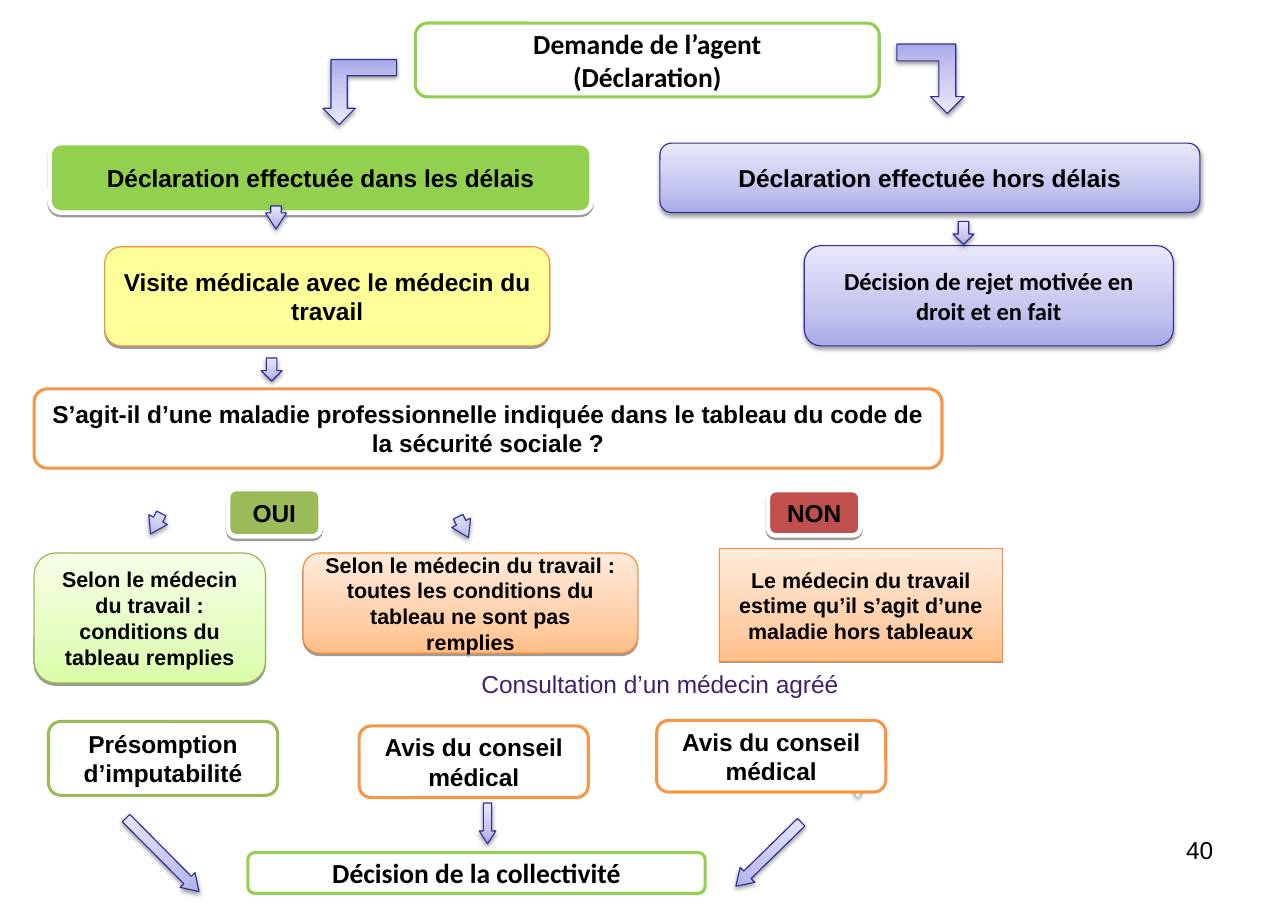
from copy import deepcopy
from dataclasses import dataclass

from lxml import etree
from pptx import Presentation
from pptx.dml.color import RGBColor
from pptx.enum.shapes import MSO_SHAPE
from pptx.enum.text import MSO_ANCHOR, PP_ALIGN
from pptx.oxml.ns import qn
from pptx.util import Inches, Pt

ROUNDED = MSO_SHAPE.ROUNDED_RECTANGLE
RECTANGLE = MSO_SHAPE.RECTANGLE
DOWN_ARROW = MSO_SHAPE.DOWN_ARROW
BENT_ARROW = MSO_SHAPE.BENT_UP_ARROW
CENTER, RIGHT = PP_ALIGN.CENTER, PP_ALIGN.RIGHT
TOP, MIDDLE = MSO_ANCHOR.TOP, MSO_ANCHOR.MIDDLE

COLORS = {
    "white": "FFFFFF", "black": "000000", "purple": "3F2270",
    "lime": "92D050", "green": "9BBB59", "dark_green": "94B64E",
    "red": "C0504D", "yellow": "FFFF99", "orange": "F79646",
    "dark_orange": "F68C36", "navy": "2F2F98", "pale": "F9F9F9",
    "lilac_0": "A9A9E9", "lilac_1": "C4C4EF", "lilac_2": "E8E8FA",
    "peach_0": "FFBE86", "peach_1": "FFD0AA", "peach_2": "FFEBDB",
    "mint_0": "DAFDA7", "mint_1": "E4FDC2", "mint_2": "F5FFE6",
}
GRADIENT_POSITIONS = (0, 0.35, 1)

# style: fill, line colour, line width, shadow blur (None = no shadow)
STYLES = {
    "lime_outline": ("white", "lime", 2, None),
    "green_outline": ("white", "green", 2, None),
    "orange_outline": ("white", "orange", 2, None),
    "lime_solid": ("lime", "white", 3, 0),
    "green_solid": ("green", "white", 3, 0),
    "red_solid": ("red", "white", 3, 0),
    "yellow": ("yellow", "dark_orange", 0.75, 0),
    "lilac": ("lilac", "navy", 0.75, 3.1),
    "peach": ("peach", "dark_orange", 0.75, 0),
    "mint": ("mint", "dark_green", 0.75, 0),
    "ghost": ("white", "pale", 0.75, 3.1),
    "plain": ("white", None, 0, None),
}


@dataclass
class Box:
    left: float
    top: float
    width: float
    height: float

    def inner(self, left, top, width, height):
        return Box(self.left + left, self.top + top, width, height)

    def lengths(self):
        return [Inches(v) for v in (self.left, self.top, self.width, self.height)]


def rgb(name):
    return RGBColor.from_string(COLORS[name])


def fill_gradient(shape, name):
    shape.fill.gradient()
    shape.fill.gradient_angle = 90
    stop_list = shape._element.spPr.find(qn("a:gradFill")).find(qn("a:gsLst"))
    stop_list.append(deepcopy(stop_list[-1]))
    for index, stop in enumerate(shape.fill.gradient_stops):
        stop.position = GRADIENT_POSITIONS[index]
        stop.color.rgb = rgb(f"{name}_{index}")


def add_shadow(shape, blur):
    effects = shape._element.spPr.find(qn("a:effectLst"))
    shadow = etree.SubElement(
        effects, qn("a:outerShdw"), blurRad=str(Pt(blur)), dist=str(Pt(1.6)),
        dir="5400000", rotWithShape="0")
    color = etree.SubElement(shadow, qn("a:srgbClr"), val=COLORS["black"])
    etree.SubElement(color, qn("a:alpha"), val="38000")


def add_styled(slide, kind, box, style):
    fill, line, line_width, blur = STYLES[style]
    shape = slide.shapes.add_shape(kind, *box.lengths())
    if f"{fill}_0" in COLORS:
        fill_gradient(shape, fill)
    else:
        shape.fill.solid()
        shape.fill.fore_color.rgb = rgb(fill)
    if line:
        shape.line.color.rgb = rgb(line)
        shape.line.width = Pt(line_width)
    else:
        shape.line.fill.background()
    shape.shadow.inherit = False
    if blur is not None:
        add_shadow(shape, blur)
    return shape


def write(shape, text, size=16, font="Arial", color="black", bold=True,
          align=CENTER, anchor=MIDDLE):
    frame = shape.text_frame
    frame.word_wrap = True
    frame.vertical_anchor = anchor
    frame.text = text
    for paragraph in frame.paragraphs:
        paragraph.alignment = align
        for run in paragraph.runs:
            values = {"size": Pt(size), "name": font, "bold": bold}
            for name, value in values.items():
                setattr(run.font, name, value)
            run.font.color.rgb = rgb(color)


def add_step(slide, box, style, text, kind=ROUNDED, **text_format):
    write(add_styled(slide, kind, box, style), text, **text_format)


def add_arrow(slide, box, rotation=0, head=0.776, style="lilac"):
    arrow = add_styled(slide, DOWN_ARROW, box, style)
    arrow.adjustments[1] = head
    arrow.rotation = rotation


def add_bent_arrow(slide, box, flipped):
    arrow = add_styled(slide, BENT_ARROW, box, "lilac")
    arrow.rotation = 180
    if flipped:
        arrow._element.spPr.find(qn("a:xfrm")).set("flipH", "1")


def build_request(slide, box):
    add_step(slide, box.inner(0.84, 0, 4.21, 0.67), "lime_outline",
             "Demande de l’agent\n(Déclaration)", size=18, font="Calibri")
    add_bent_arrow(slide, box.inner(0, 0.33, 0.67, 0.59), False)
    add_bent_arrow(slide, box.inner(5.21, 0.19, 0.61, 0.63), True)


def build_in_time(slide, box):
    add_step(slide, box.inner(0.14, 0, 4.92, 0.63), "lime_solid",
             "Déclaration effectuée dans les délais")
    add_step(slide, box.inner(0.64, 0.94, 4.04, 0.9), "yellow",
             "Visite médicale avec le médecin du travail")
    add_step(slide, box.inner(0, 2.23, box.width, 0.72), "orange_outline",
             "S’agit-il d’une maladie professionnelle indiquée dans le tableau "
             "du code de la sécurité sociale ?")
    add_arrow(slide, box.inner(2.1, 0.57, 0.19, 0.21))
    add_arrow(slide, box.inner(2.06, 1.95, 0.19, 0.21), head=0.5)


def build_late(slide, box):
    add_step(slide, box.inner(0, 0, box.width, 0.63), "lilac",
             "Déclaration effectuée hors délais")
    add_step(slide, box.inner(1.31, 0.93, 3.35, 0.91), "lilac",
             "Décision de rejet motivée en droit et en fait", font="Calibri")
    add_arrow(slide, box.inner(2.66, 0.71, 0.19, 0.21), head=0.5)


def build_assessment(slide, box):
    # Answers
    add_step(slide, box.inner(1.76, 0, 0.84, 0.43), "green_solid", "OUI")
    add_step(slide, box.inner(6.66, 0.01, 0.84, 0.41), "red_solid", "NON")
    # Views of the work doctor
    add_step(slide, box.inner(0, 0.58, 2.1, 1.18), "mint",
             "Selon le médecin du travail : conditions du tableau remplies", size=14)
    add_step(slide, box.inner(2.44, 0.58, 3.04, 0.91), "peach",
             "Selon le médecin du travail : toutes les conditions du tableau "
             "ne sont pas\vremplies", size=14)
    add_step(slide, box.inner(6.22, 0.54, 2.57, 1.03), "peach",
             "Le médecin du travail estime qu’il s’agit d’une maladie hors tableaux",
             kind=RECTANGLE, size=14)
    add_step(slide, box.inner(2.49, 1.58, 6.38, 0.49), "plain",
             "Consultation d’un médecin agréé", kind=RECTANGLE,
             color="purple", bold=False, anchor=TOP)
    # Arrows from the question
    add_arrow(slide, box.inner(1.01, 0.21, 0.19, 0.21), rotation=27.7)
    add_arrow(slide, box.inner(3.8, 0.24, 0.19, 0.21), rotation=333.6)


def build_outcome(slide, box):
    add_arrow(slide, box.inner(7.38, 0.48, 0.19, 0.21), style="ghost")
    # Opinions
    add_step(slide, box.inner(0.13, 0.01, 2.08, 0.67), "green_outline",
             "Présomption d’imputabilité")
    for left, top in ((2.95, 0.05), (5.65, 0)):
        add_step(slide, box.inner(left, top, 2.08, 0.65), "orange_outline",
                 "Avis du conseil médical")
    # Final decision
    add_step(slide, box.inner(1.94, 1.2, 4.15, 0.37), "lime_outline",
             "Décision de la collectivité", size=18, font="Calibri")
    add_arrow(slide, box.inner(1.07, 0.75, 0.19, 0.94), rotation=315.2)
    add_arrow(slide, box.inner(4.04, 0.75, 0.15, 0.37))
    add_arrow(slide, box.inner(6.57, 0.8, 0.19, 0.83), rotation=45.6)


def build_page_number(slide, box):
    write(slide.shapes.add_textbox(*box.lengths()), "40",
          bold=False, align=RIGHT, anchor=TOP)


def main():
    presentation = Presentation()
    presentation.slide_width = Inches(11.69)
    presentation.slide_height = Inches(8.27)
    slide = presentation.slides.add_slide(presentation.slide_layouts[6])
    build_page_number(slide, Box(8.38, 7.53, 2.73, 0.57))
    build_request(slide, Box(2.93, 0.21, 5.82, 0.92))
    build_in_time(slide, Box(0.31, 1.3, 8.24, 2.95))
    build_late(slide, Box(5.99, 1.3, 4.9, 1.84))
    build_assessment(slide, Box(0.31, 4.44, 8.87, 2.07))
    build_outcome(slide, Box(0.31, 6.54, 8.24, 1.69))
    presentation.save("out.pptx")


if __name__ == "__main__":
    main()
